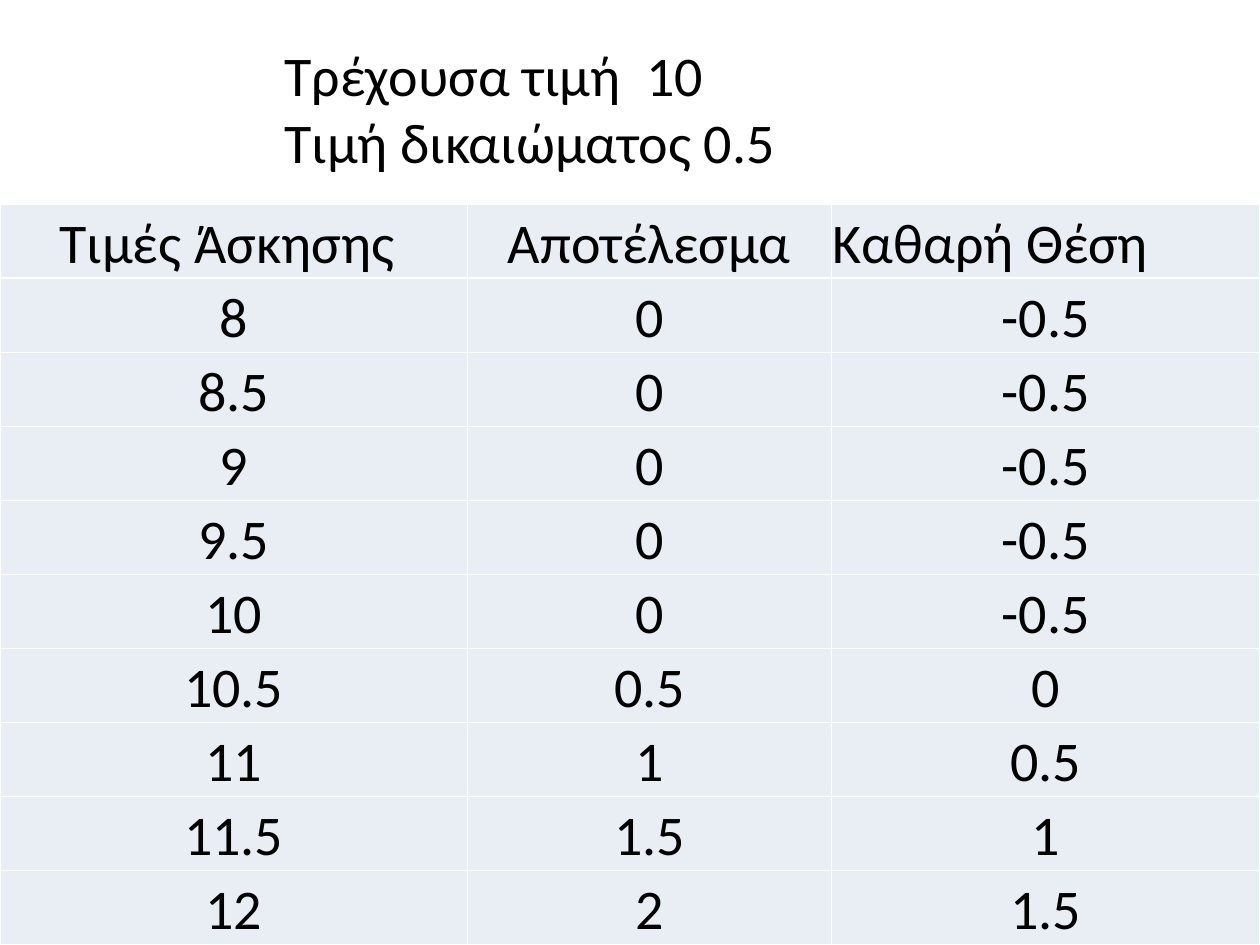
from dataclasses import dataclass

from pptx import Presentation
from pptx.dml.color import RGBColor
from pptx.enum.text import MSO_ANCHOR, MSO_AUTO_SIZE, PP_ALIGN
from pptx.util import Inches, Pt

WIDE, HIGH = Inches(10), Inches(7.5)
SPOT, PRICE = 10, 0.5
INK, PALE = "000000", "E9EDF4"
HEADS = ["Τιμές Άσκησης ", "Αποτέλεσμα", "Καθαρή Θέση"]
SHARES = [0.371, 0.289, 0.34]
STRIKES = [8 + step / 2 for step in range(9)]


@dataclass
class Box:
    """A frame given as shares of the slide's size."""
    left: float
    top: float
    width: float
    height: float

    def area(self) -> tuple[int, ...]:
        """Return left, top, width and height as lengths."""
        return (int(self.left * WIDE), int(self.top * HIGH),
                int(self.width * WIDE), int(self.height * HIGH))


def paint(code: str) -> RGBColor:
    """Turn a hex string into a colour."""
    return RGBColor.from_string(code)


def style(frame, align: PP_ALIGN) -> None:
    """Align the paragraphs of a frame and format their runs."""
    for para in frame.paragraphs:
        para.alignment = align
        for run in para.runs:
            run.font.name = "Calibri"
            run.font.size = Pt(32)
            run.font.bold = False
            run.font.color.rgb = paint(INK)


def add_note(slide, box: Box, text: str) -> None:
    """Add the lines that state the current price and the option price."""
    frame = slide.shapes.add_textbox(*box.area()).text_frame
    frame.word_wrap = False
    frame.auto_size = MSO_AUTO_SIZE.SHAPE_TO_FIT_TEXT
    frame.text = text
    style(frame, PP_ALIGN.LEFT)


def fill_cell(cell, text: str, align: PP_ALIGN) -> None:
    """Write one cell on the pale fill."""
    cell.fill.solid()
    cell.fill.fore_color.rgb = paint(PALE)
    cell.vertical_anchor = MSO_ANCHOR.BOTTOM
    cell.margin_left = cell.margin_right = cell.margin_top = Inches(0.01)
    cell.margin_bottom = 0
    cell.text_frame.text = text
    style(cell.text_frame, align)


def add_grid(slide, box: Box, rows: list[list[str]]) -> None:
    """Add the payoff table with equal rows."""
    area = box.area()
    table = slide.shapes.add_table(len(rows), len(HEADS), *area).table
    table.first_row = table.horz_banding = False
    for col, share in zip(table.columns, SHARES):
        col.width = int(share * area[2])
    for r, row in enumerate(rows):
        table.rows[r].height = area[3] // len(rows)
        for c, text in enumerate(row):
            last = r == 0 and c == len(row) - 1
            fill_cell(table.cell(r, c), text,
                      PP_ALIGN.LEFT if last else PP_ALIGN.CENTER)


def payoff(strike: float) -> list[str]:
    """Return the strike, its result and the net position as text."""
    gain = max(strike - SPOT, 0)
    return [f"{value:g}" for value in (strike, gain, gain - PRICE)]


def main() -> None:
    """Build and save the slide."""
    deck = Presentation()
    deck.slide_width, deck.slide_height = WIDE, HIGH
    slide = deck.slides.add_slide(deck.slide_layouts[6])
    add_grid(slide, Box(0, 0.216, 1, 0.784),
             [HEADS] + [payoff(strike) for strike in STRIKES])
    add_note(slide, Box(0.216, 0.036, 0.433, 0.157),
             f"Τρέχουσα τιμή  {SPOT}\nΤιμή δικαιώματος {PRICE}")
    deck.save("out.pptx")


if __name__ == "__main__":
    main()
